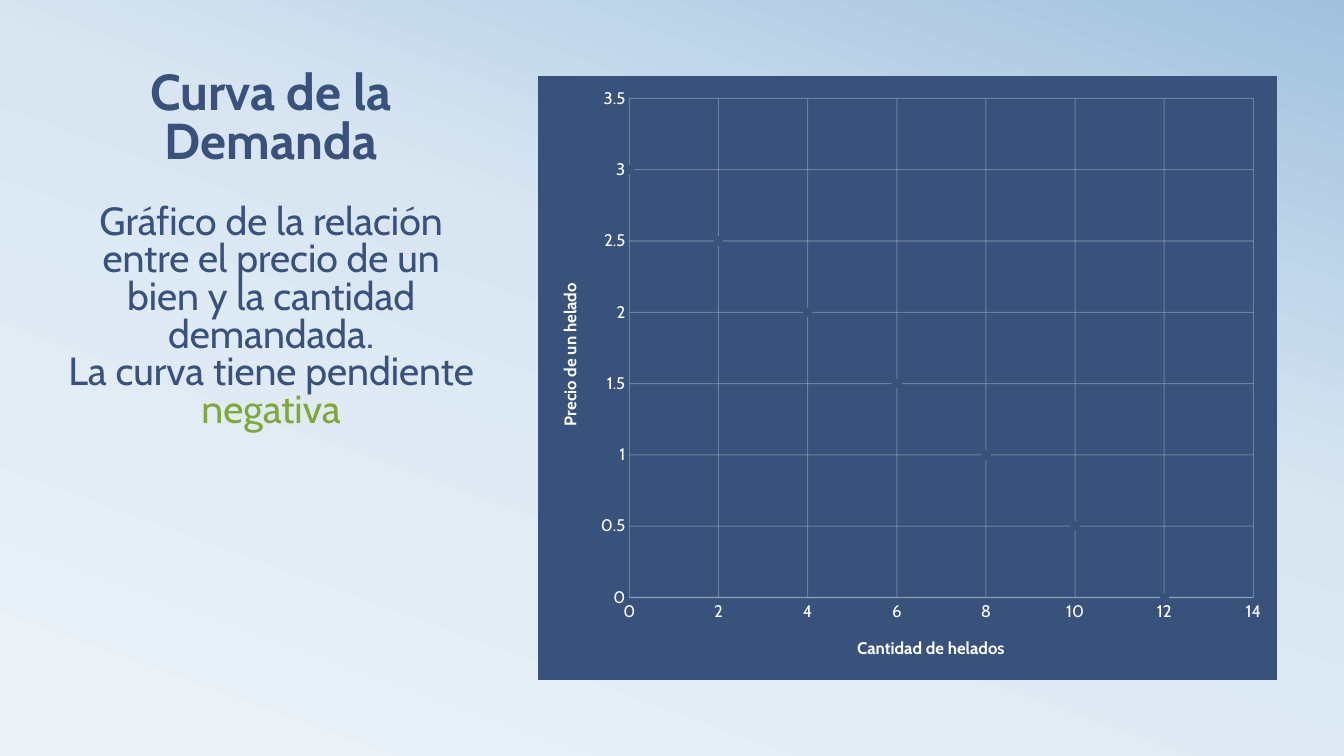
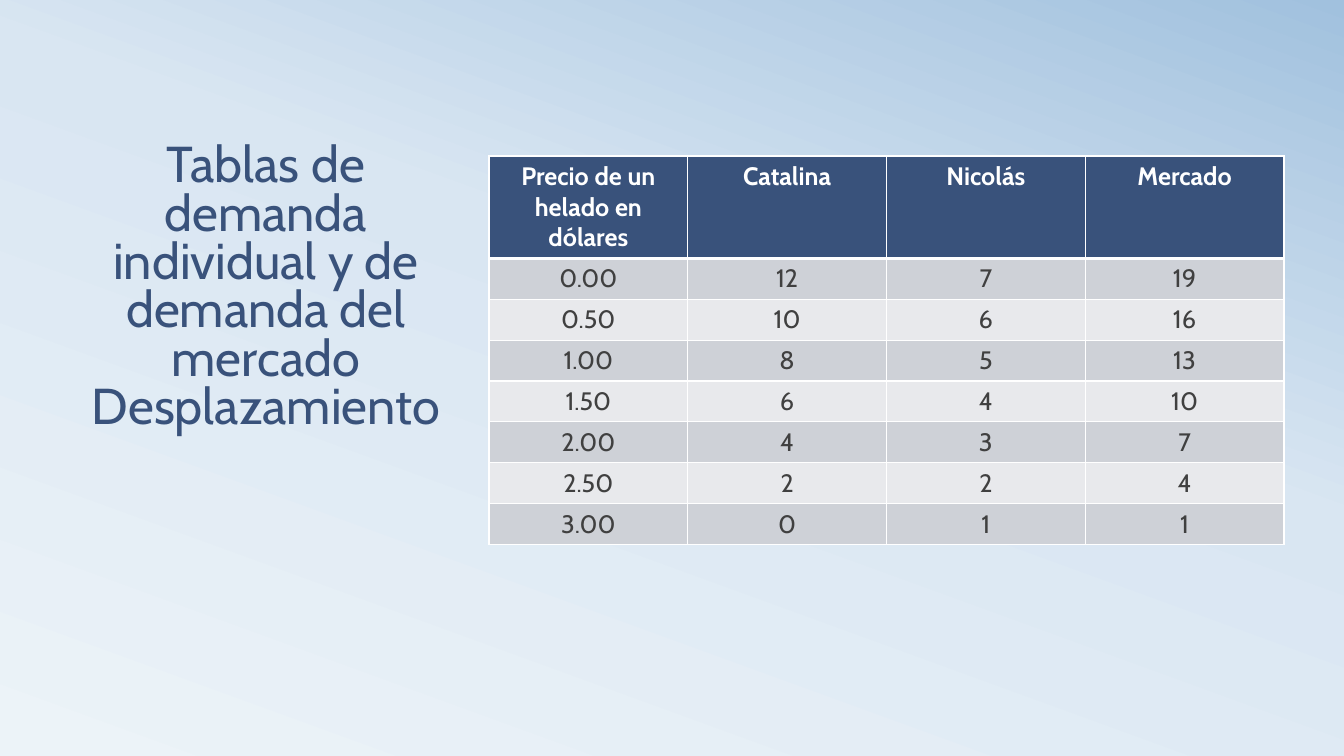
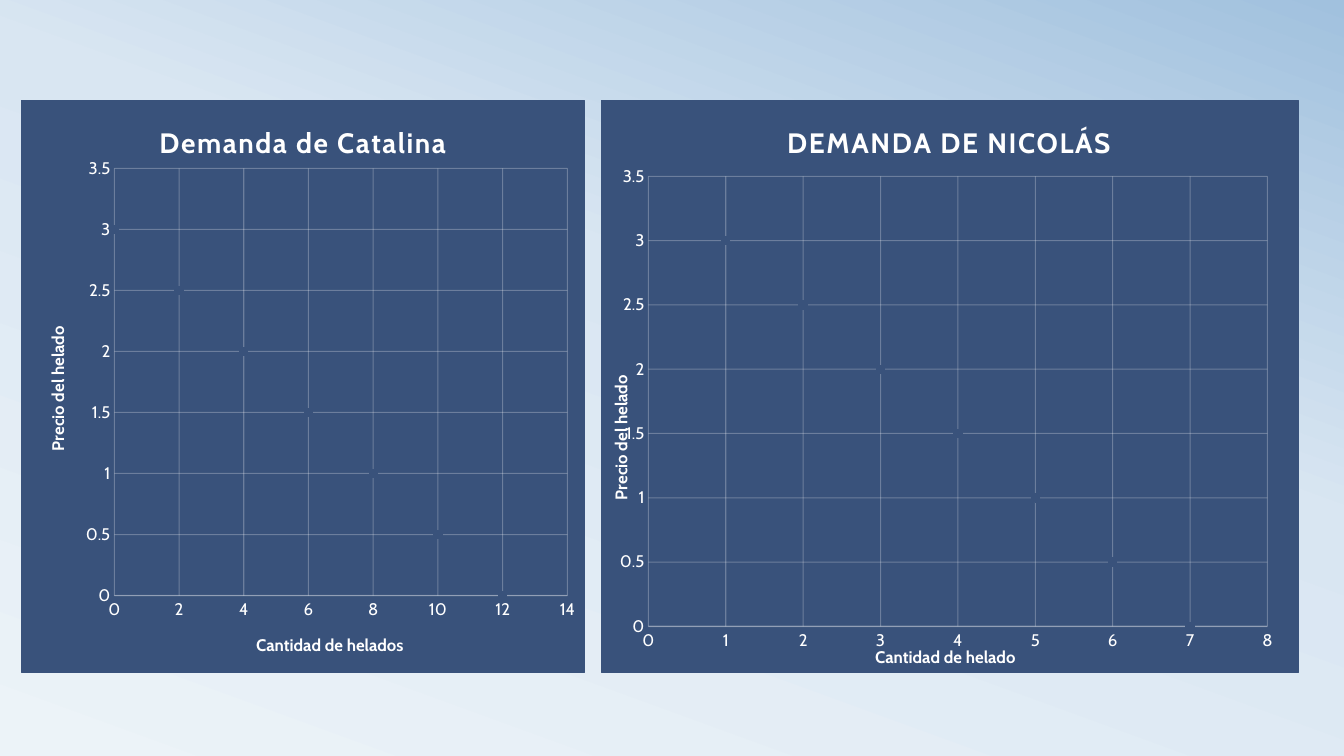
from copy import deepcopy
from dataclasses import dataclass

from lxml.etree import SubElement
from pptx import Presentation
from pptx.chart.data import XyChartData
from pptx.dml.color import RGBColor
from pptx.enum.chart import XL_CHART_TYPE, XL_MARKER_STYLE, XL_TICK_MARK
from pptx.enum.text import MSO_ANCHOR, MSO_AUTO_SIZE, PP_ALIGN
from pptx.oxml import parse_xml
from pptx.oxml.ns import nsdecls, qn
from pptx.util import Emu, Pt

SLIDE_WIDTH, SLIDE_HEIGHT = 1344, 756
EMU_PER_PX = 12192000 / SLIDE_WIDTH
FONT = "Cabin"
COLORS = {
    "navy": "39527B",
    "green": "7EA939",
    "white": "FFFFFF",
    "ink": "404040",
    "band_dark": "CED1D7",
    "band_light": "E8E9EC",
}
BACKGROUND_STOPS = [(0, "ECF3F8"), (58, "D9E6F2"), (100, "A1C1DE")]
PRICES = [0, 0.5, 1, 1.5, 2, 2.5, 3]
CATALINA = [12, 10, 8, 6, 4, 2, 0]
NICOLAS = [7, 6, 5, 4, 3, 2, 1]


@dataclass(frozen=True)
class Box:
    left: int
    top: int
    width: int
    height: int

    def emu(self) -> tuple:
        return tuple(px(v) for v in (self.left, self.top, self.width, self.height))


@dataclass(frozen=True)
class Label:
    """A chart text with its top left corner on the slide."""
    text: str
    left: int
    top: int


@dataclass(frozen=True)
class DemandChart:
    frame: Box
    plot: Box
    points: list
    quantity_max: int
    quantity_step: int
    quantity_label: Label
    price_label: Label
    title: Label | None = None


CATALINA_POINTS = list(zip(CATALINA, PRICES))
NICOLAS_POINTS = list(zip(NICOLAS, PRICES))
CURVE = DemandChart(
    Box(538, 76, 739, 604), Box(629, 98, 625, 500), CATALINA_POINTS[::-1], 14, 2,
    Label("Cantidad de helados", 854, 634),
    Label("Precio de un helado", 555, 280))
INDIVIDUAL_CURVES = [
    DemandChart(
        Box(21, 100, 564, 573), Box(114, 168, 454, 428), CATALINA_POINTS, 14, 2,
        Label("Cantidad de helados", 253, 631),
        Label("Precio del helado", 43, 323),
        Label("Demanda de Catalina", 154, 117)),
    DemandChart(
        Box(601, 100, 698, 573), Box(648, 176, 620, 451), NICOLAS_POINTS, 8, 1,
        Label("Cantidad de helado", 872, 643),
        Label("Precio del helado", 606, 372),
        Label("DEMANDA DE NICOLÁS", 782, 117)),
]


def px(value: int) -> Emu:
    return Emu(round(value * EMU_PER_PX))


def color(name: str) -> RGBColor:
    return RGBColor.from_string(COLORS[name])


def style_font(font, size: int, color_name: str, bold: bool = False) -> None:
    font.name = FONT
    font.size = Pt(size)
    font.bold = bold
    font.color.rgb = color(color_name)


def paint_background(master) -> None:
    fill = master.background.fill
    fill.gradient()
    fill.gradient_angle = 70
    stops = master.element.find(".//" + qn("a:gsLst"))
    stops.insert(1, deepcopy(stops[0]))
    for stop, (position, hex_value) in zip(fill.gradient_stops, BACKGROUND_STOPS):
        stop.position = position / 100
        stop.color.rgb = RGBColor.from_string(hex_value)


def fill_title(slide, box: Box, text: str, sizes: list, bold_first: bool = False):
    """Write one paragraph per line of text, each in its own size."""
    title = slide.shapes.title
    title.left, title.top, title.width, title.height = box.emu()
    frame = title.text_frame
    frame.word_wrap = True
    frame.auto_size = MSO_AUTO_SIZE.NONE
    frame.vertical_anchor = MSO_ANCHOR.TOP
    frame.text = text
    for index, (paragraph, size) in enumerate(zip(frame.paragraphs, sizes)):
        paragraph.alignment = PP_ALIGN.CENTER
        paragraph.line_spacing = 0.8
        paragraph.space_before = paragraph.space_after = Pt(0)
        style_font(paragraph.runs[0].font, size, "navy", bold_first and index == 0)
    return frame


def set_layout(element, frame: Box, left: int, top: int, size: tuple = ()) -> None:
    """Place a chart part by its slide position, as fractions of the chart."""
    layout = element.find(qn("c:layout"))
    if layout is None:
        layout = parse_xml(f"<c:layout {nsdecls('c')}/>")
        element.insert(0 if element.find(qn("c:tx")) is None else 1, layout)
    for child in list(layout):
        layout.remove(child)
    values = [("xMode", "edge"), ("yMode", "edge"),
              ("x", (left - frame.left) / frame.width),
              ("y", (top - frame.top) / frame.height)]
    if size:
        values.insert(0, ("layoutTarget", "inner"))
        values += [("w", size[0] / frame.width), ("h", size[1] / frame.height)]
    manual = SubElement(layout, qn("c:manualLayout"))
    for tag, value in values:
        text = value if isinstance(value, str) else f"{value:.4f}"
        SubElement(manual, qn(f"c:{tag}")).set("val", text)


def write_label(title, label: Label, frame: Box, size: int = 12) -> None:
    title.text_frame.text = label.text
    style_font(title.text_frame.paragraphs[0].runs[0].font, size, "white", True)
    set_layout(title.element, frame, label.left, label.top)


def style_axis(axis, label: Label, frame: Box, maximum: float, step: float) -> None:
    axis.minimum_scale, axis.maximum_scale, axis.major_unit = 0, maximum, step
    axis.major_tick_mark = axis.minor_tick_mark = XL_TICK_MARK.NONE
    axis.has_major_gridlines = True
    grid = axis.major_gridlines.format.line
    grid.width = Pt(0.75)
    grid.color.rgb = color("white")
    style_font(axis.tick_labels.font, 12, "white")
    write_label(axis.axis_title, label, frame)


def add_demand_chart(slide, spec: DemandChart) -> None:
    data = XyChartData()
    points = data.add_series("Series 1")
    for quantity, price in spec.points:
        points.add_data_point(quantity, price)
    chart = slide.shapes.add_chart(
        XL_CHART_TYPE.XY_SCATTER, *spec.frame.emu(), data).chart
    style_font(chart.font, 10, "ink")
    chart.has_legend = False
    chart.has_title = spec.title is not None
    if spec.title:
        write_label(chart.chart_title, spec.title, spec.frame, 20)
        chart.chart_title.element.find(".//" + qn("a:rPr")).set("spc", "100")

    quantity_axis, price_axis = chart.category_axis, chart.value_axis
    style_axis(quantity_axis, spec.quantity_label, spec.frame,
               spec.quantity_max, spec.quantity_step)
    style_axis(price_axis, spec.price_label, spec.frame, 3.5, 0.5)
    quantity_axis.format.line.width = Pt(1)
    quantity_axis.format.line.color.rgb = color("white")
    price_axis.format.line.fill.background()
    price_axis.axis_title.element.find(".//" + qn("a:bodyPr")).set("rot", "-5400000")
    for line_color in chart.element.xpath(".//c:valAx//a:ln//a:srgbClr"):
        SubElement(line_color, qn("a:alpha")).set("val", "25000")

    plot = chart.plots[0]
    plot.vary_by_categories = False
    series = plot.series[0]
    series.format.line.fill.background()
    series.marker.style = XL_MARKER_STYLE.CIRCLE
    series.marker.size = 6
    series.marker.format.fill.solid()
    series.marker.format.fill.fore_color.rgb = color("navy")
    series.marker.format.line.color.rgb = color("navy")

    area = spec.plot
    set_layout(chart.element.find(".//" + qn("c:plotArea")), spec.frame,
               area.left, area.top, (area.width, area.height))
    solid = f'<a:solidFill><a:srgbClr val="{COLORS["navy"]}"/></a:solidFill>'
    chart.element.find(qn("c:chart")).addnext(parse_xml(
        f'<c:spPr {nsdecls("c", "a")}>{solid}<a:ln w="9525">{solid}</a:ln></c:spPr>'))


def set_borders(cell, top: int, bottom: int) -> None:
    """Draw white borders, with the top and bottom widths in points."""
    properties = cell._tc.get_or_add_tcPr()
    for side, width in (("L", 1), ("R", 1), ("T", top), ("B", bottom)):
        line = SubElement(properties, qn(f"a:ln{side}"), w=str(Pt(width)))
        fill = SubElement(line, qn("a:solidFill"))
        SubElement(fill, qn("a:srgbClr"), val=COLORS["white"])


def add_demand_table(slide) -> None:
    rows = [("Precio de un helado en dólares", "Catalina", "Nicolás", "Mercado")]
    rows += [(f"{price:.2f}", str(catalina), str(nicolas), str(catalina + nicolas))
             for price, catalina, nicolas in zip(PRICES, CATALINA, NICOLAS)]
    header_height, body_height = 102, 286
    box = Box(489, 156, 795, header_height + body_height)
    table = slide.shapes.add_table(len(rows), len(rows[0]), *box.emu()).table
    table.horz_banding = False
    for column in table.columns:
        column.width = px(box.width) // len(rows[0])
    for row_index, texts in enumerate(rows):
        header = row_index == 0
        row = table.rows[row_index]
        row.height = px(header_height) if header else px(body_height) // len(PRICES)
        band = "navy" if header else ("band_light", "band_dark")[row_index % 2]
        for cell, text in zip(row.cells, texts):
            set_borders(cell, 3 if row_index == 1 else 1, 3 if header else 1)
            cell.fill.solid()
            cell.fill.fore_color.rgb = color(band)
            cell.text = text
            paragraph = cell.text_frame.paragraphs[0]
            paragraph.alignment = PP_ALIGN.CENTER
            style_font(paragraph.runs[0].font, 18, "white" if header else "ink", header)


def main() -> None:
    deck = Presentation()
    deck.slide_width, deck.slide_height = px(SLIDE_WIDTH), px(SLIDE_HEIGHT)
    paint_background(deck.slide_master)
    title_only, blank = deck.slide_layouts[5], deck.slide_layouts[6]

    curve_slide = deck.slides.add_slide(title_only)
    explanation = fill_title(
        curve_slide, Box(53, 67, 436, 554),
        "Curva de la Demanda\n"
        "Gráfico de la relación entre el precio de un bien y la cantidad demandada.\n"
        "La curva tiene pendiente ",
        [36, 28, 28], bold_first=True)
    explanation.paragraphs[0].space_after = Pt(26)
    slope = explanation.paragraphs[-1].add_run()
    slope.text = "negativa"
    style_font(slope.font, 28, "green")
    add_demand_chart(curve_slide, CURVE)

    table_slide = deck.slides.add_slide(title_only)
    fill_title(
        table_slide, Box(67, 139, 398, 458),
        "Tablas de demanda individual y de demanda del mercado\nDesplazamiento",
        [36, 36])
    add_demand_table(table_slide)

    individual_slide = deck.slides.add_slide(blank)
    for curve in INDIVIDUAL_CURVES:
        add_demand_chart(individual_slide, curve)

    deck.save("out.pptx")


if __name__ == "__main__":
    main()
